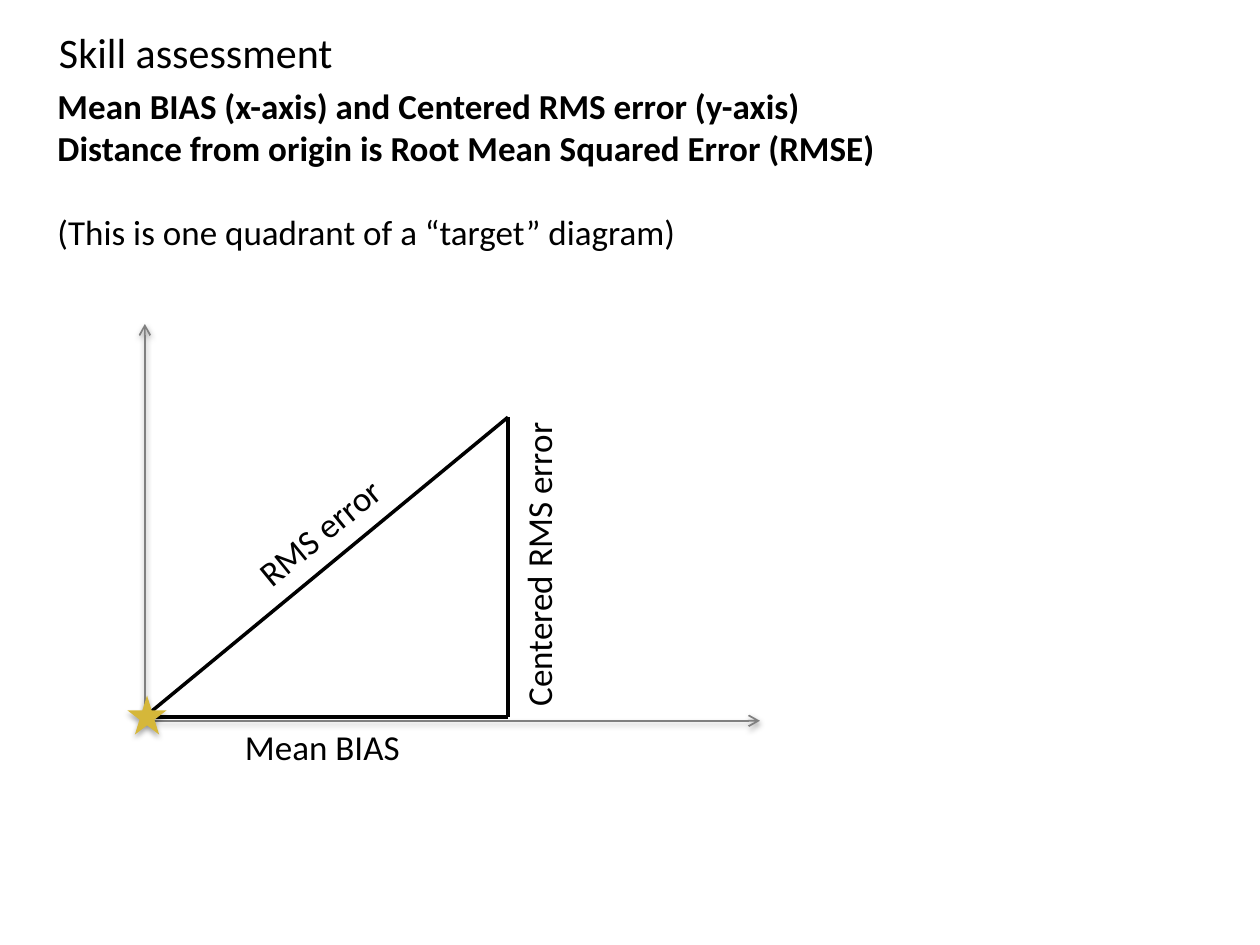
from dataclasses import dataclass

from lxml.etree import SubElement
from pptx import Presentation
from pptx.dml.color import RGBColor
from pptx.enum.shapes import MSO_CONNECTOR, MSO_SHAPE
from pptx.enum.text import PP_ALIGN
from pptx.oxml.ns import qn
from pptx.util import Cm, Pt


@dataclass(frozen=True)
class Theme:
    font: str = "Calibri"
    title: int = 24
    body: int = 20
    ink: RGBColor = RGBColor(0x00, 0x00, 0x00)
    axis: RGBColor = RGBColor(0x80, 0x80, 0x80)
    star: RGBColor = RGBColor(0xD5, 0xB7, 0x3A)
    axis_width: int = 1
    side_width: int = 2
    shadow_blur: float = 3.15


THEME = Theme()


def add_effects(sp, opacity=None, distance=0):
    effects = SubElement(sp._element.spPr, qn("a:effectLst"))
    if opacity is None:
        return
    shadow = SubElement(effects, qn("a:outerShdw"), {
        "blurRad": str(Pt(THEME.shadow_blur)), "dist": str(Pt(distance)),
        "dir": "5400000", "rotWithShape": "0"})
    color = SubElement(shadow, qn("a:srgbClr"), val="000000")
    SubElement(color, qn("a:alpha"), val=str(opacity * 1000))


def add_text(s, box, lines, size=THEME.body, wrap=True, bold=False):
    sp = s.shapes.add_textbox(*map(Cm, box))
    tf = sp.text_frame
    tf.word_wrap = wrap
    tf.text = "\n".join(lines)
    for p in tf.paragraphs:
        for r in p.runs:
            r.font.name = THEME.font
            r.font.size = Pt(size)
            r.font.color.rgb = THEME.ink
            r.font.bold = bold
    return sp


def add_label(s, box, text, rotation=0):
    sp = add_text(s, box, [text])
    sp.rotation = rotation
    sp.text_frame.paragraphs[0].alignment = PP_ALIGN.CENTER


def add_line(s, start, end, color, width):
    line = s.shapes.add_connector(MSO_CONNECTOR.STRAIGHT, *map(Cm, start + end))
    line.line.color.rgb = color
    line.line.width = Pt(width)
    return line


def add_side(s, start, end):
    add_effects(add_line(s, start, end, THEME.ink, THEME.side_width))


def add_axis(s, start, end):
    axis = add_line(s, start, end, THEME.axis, THEME.axis_width)
    SubElement(axis.line._get_or_add_ln(), qn("a:tailEnd"), type="arrow")
    add_effects(axis, opacity=38, distance=1.57)


def add_star(s, box):
    sp = s.shapes.add_shape(MSO_SHAPE.STAR_5_POINT, *map(Cm, box))
    sp.fill.solid()
    sp.fill.fore_color.rgb = THEME.star
    sp.line.fill.background()
    add_effects(sp, opacity=35, distance=1.81)


def add_heading(s):
    sp = add_text(s, (0.91, 1.57, 23.88, 3.68), [
        "Mean BIAS (x-axis) and Centered RMS error (y-axis)",
        "Distance from origin is Root Mean Squared Error (RMSE)",
        "(This is one quadrant of a “target” diagram)"], bold=True)
    p = sp.text_frame.paragraphs[-1]
    p.space_before = Pt(24.4)
    p.runs[0].font.bold = False
    add_text(s, (0.94, 0.41, 6.1, 1.27), ["Skill assessment"],
             size=THEME.title, wrap=False)


def add_diagram(s):
    left, right, top, base = 2.92, 10.24, 8.41, 14.45
    origin, corner, peak = (left, base), (right, base), (right, top)
    for start, end in ((origin, corner), (corner, peak), (origin, peak)):
        add_side(s, start, end)
    add_label(s, (7.24, 10.82, 7.24, 1.12), "Centered RMS error", 270)
    add_label(s, (left, 14.5, 7.16, 1.12), "Mean BIAS")
    axis_origin = (left, 14.53)
    for end in ((left, 6.53), (15.32, 14.53)):
        add_axis(s, axis_origin, end)
    add_label(s, (1.6, 10.16, 9.68, 1.12), "RMS error", 320.7)
    add_star(s, (2.57, 14.02, 0.79, 0.79))


def main():
    prs = Presentation()
    prs.slide_width, prs.slide_height = Cm(25.4), Cm(19.05)
    s = prs.slides.add_slide(prs.slide_layouts[6])
    add_heading(s)
    add_diagram(s)
    prs.save("out.pptx")


if __name__ == "__main__":
    main()
